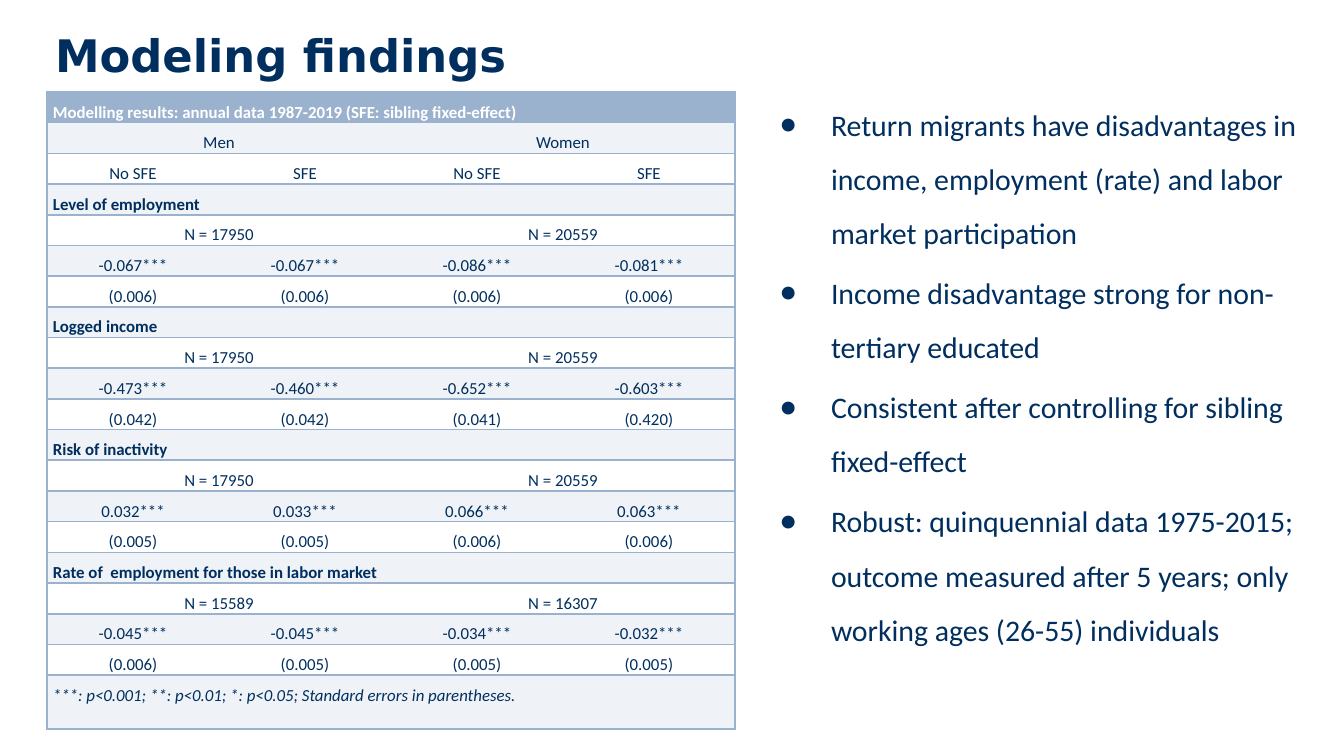
from typing import NamedTuple

from lxml.etree import SubElement
from pptx import Presentation
from pptx.dml.color import RGBColor
from pptx.enum.text import MSO_ANCHOR, MSO_AUTO_SIZE, PP_ALIGN
from pptx.oxml.ns import qn
from pptx.util import Emu, Pt

SCALE = 914400 / 134.4  # EMU per px
NAVY, BLUE, TINT, WHITE = "002F5F", "9BB2CE", "EFF2F6", "FFFFFF"
NO_STYLE = "{2D5ABB26-0587-4C30-8999-92F81FD0307C}"
COLS, COL_W, ROW_H, NOTE_H = 4, 172, 30, 54


class Row(NamedTuple):
    texts: list[str]
    format: dict = {}


class Section(NamedTuple):
    heading: str
    counts: list[str]
    effects: list[str]
    errors: list[str]


SECTIONS = [
    Section("Level of employment", ["N = 17950", "N = 20559"],
            ["-0.067***", "-0.067***", "-0.086***", "-0.081***"],
            ["(0.006)", "(0.006)", "(0.006)", "(0.006)"]),
    Section("Logged income", ["N = 17950", "N = 20559"],
            ["-0.473***", "-0.460***", "-0.652***", "-0.603***"],
            ["(0.042)", "(0.042)", "(0.041)", "(0.420)"]),
    Section("Risk of inactivity", ["N = 17950", "N = 20559"],
            ["0.032***", "0.033***", "0.066***", "0.063***"],
            ["(0.005)", "(0.005)", "(0.006)", "(0.006)"]),
    Section("Rate of  employment for those in labor market", ["N = 15589", "N = 16307"],
            ["-0.045***", "-0.045***", "-0.034***", "-0.032***"],
            ["(0.006)", "(0.005)", "(0.005)", "(0.005)"]),
]
FINDINGS = [
    "Return migrants have disadvantages in income, employment (rate) and labor market participation",
    "Income disadvantage strong for non-tertiary educated",
    "Consistent after controlling for sibling fixed-effect",
    "Robust: quinquennial data 1975-2015; outcome measured after 5 years; "
    "only working ages (26-55) individuals",
]


def px(n: int) -> Emu:
    return Emu(round(n * SCALE))


def rgb(color: str) -> RGBColor:
    return RGBColor.from_string(color)


def set_attrs(obj, values: dict) -> None:
    for name, value in values.items():
        setattr(obj, name, value)


def add_run(p, text: str, size: int, color: str = NAVY, name: str = "Calibri", **fmt) -> None:
    r = p.add_run()
    r.text = text
    set_attrs(r.font, {"size": Pt(size), "name": name, **fmt})
    r.font.color.rgb = rgb(color)


def place(sp, left: int, top: int, width: int, height: int, inset_top: int):
    """Move a placeholder and return its text frame."""
    set_attrs(sp, {"left": px(left), "top": px(top), "width": px(width), "height": px(height)})
    tf = sp.text_frame
    set_attrs(tf, {"word_wrap": True, "auto_size": MSO_AUTO_SIZE.NONE,
                   "vertical_anchor": MSO_ANCHOR.TOP, "margin_top": px(inset_top),
                   "margin_left": px(13), "margin_right": px(13)})
    return tf


def add_bullet(p, indent: int) -> None:
    pPr = p._p.get_or_add_pPr()
    pPr.set("marL", str(px(indent)))
    pPr.set("indent", str(-px(indent)))
    SubElement(pPr, qn("a:buSzPct"), val="93000")
    SubElement(pPr, qn("a:buFont"), typeface="Calibri")
    SubElement(pPr, qn("a:buChar"), char="●")


def set_borders(cell, first: bool, last: bool) -> None:
    """Rule every row; draw side lines only at the table's edges."""
    tcPr = cell._tc.get_or_add_tcPr()
    for side, shown in (("L", first), ("R", last), ("T", True), ("B", True)):
        ln = SubElement(tcPr, qn(f"a:ln{side}"), w=str(Pt(1)))
        if shown:
            fill = SubElement(ln, qn("a:solidFill"))
            SubElement(fill, qn("a:srgbClr"), val=BLUE)
        else:
            SubElement(ln, qn("a:noFill"))


def fill_row(table, i: int, row: Row) -> None:
    span = COLS // len(row.texts)
    fill = BLUE if i == 0 else TINT if i % 2 else WHITE
    for j in range(COLS):
        cell = table.cell(i, j)
        start = j - j % span
        set_borders(cell, start == 0, start + span == COLS)
        cell.fill.solid()
        cell.fill.fore_color.rgb = rgb(fill)
        set_attrs(cell, {"margin_left": px(6), "margin_right": px(6),
                         "margin_top": 0, "margin_bottom": 0})
    for k, text in enumerate(row.texts):
        cell = table.cell(i, k * span)
        if span > 1:
            cell.merge(table.cell(i, (k + 1) * span - 1))
        p = cell.text_frame.paragraphs[0]
        set_attrs(p, {"line_spacing": 1.5,
                      "alignment": PP_ALIGN.LEFT if span == COLS else PP_ALIGN.CENTER})
        add_run(p, text, 9, WHITE if i == 0 else NAVY, **row.format)


def add_results(s, rows: list[Row], left: int, top: int) -> None:
    height = ROW_H * (len(rows) - 1) + NOTE_H
    frame = s.shapes.add_table(len(rows), COLS, px(left), px(top), px(COLS * COL_W), px(height))
    table = frame.table
    set_attrs(table, {"first_row": False, "horz_banding": False})
    table._tbl.tblPr.find(qn("a:tableStyleId")).text = NO_STYLE
    for col in table.columns:
        col.width = px(COL_W)
    for i, row in enumerate(rows):
        table.rows[i].height = px(NOTE_H if i == len(rows) - 1 else ROW_H)
        fill_row(table, i, row)


def main() -> None:
    prs = Presentation()
    set_attrs(prs, {"slide_width": px(1344), "slide_height": px(756)})
    s = prs.slides.add_slide(prs.slide_layouts[1])

    # Title
    p = place(s.shapes.title, 42, 17, 1343, 117, 11).paragraphs[0]
    p.alignment = PP_ALIGN.LEFT
    add_run(p, "Modeling findings", 24, name="DejaVu Sans", bold=True)

    # Findings list
    tf = place(s.placeholders[1], 767, 81, 555, 677, 7)
    for i, text in enumerate(FINDINGS):
        p = tf.add_paragraph() if i else tf.paragraphs[0]
        add_bullet(p, 51)
        set_attrs(p, {"line_spacing": Pt(29), "space_before": Pt(3.2 if i else 0),
                      "alignment": PP_ALIGN.LEFT})
        add_run(p, text, 16)

    # Results table
    bold = {"bold": True}
    rows = [Row(["Modelling results: annual data 1987-2019 (SFE: sibling fixed-effect)"], bold),
            Row(["Men", "Women"]), Row(["No SFE", "SFE"] * 2)]
    for sec in SECTIONS:
        rows += [Row([sec.heading], bold), Row(sec.counts), Row(sec.effects), Row(sec.errors)]
    rows.append(Row(["***: p<0.001; **: p<0.01; *: p<0.05; Standard errors in parentheses."],
                    {"italic": True}))
    add_results(s, rows, 47, 92)

    prs.save("out.pptx")


if __name__ == "__main__":
    main()
